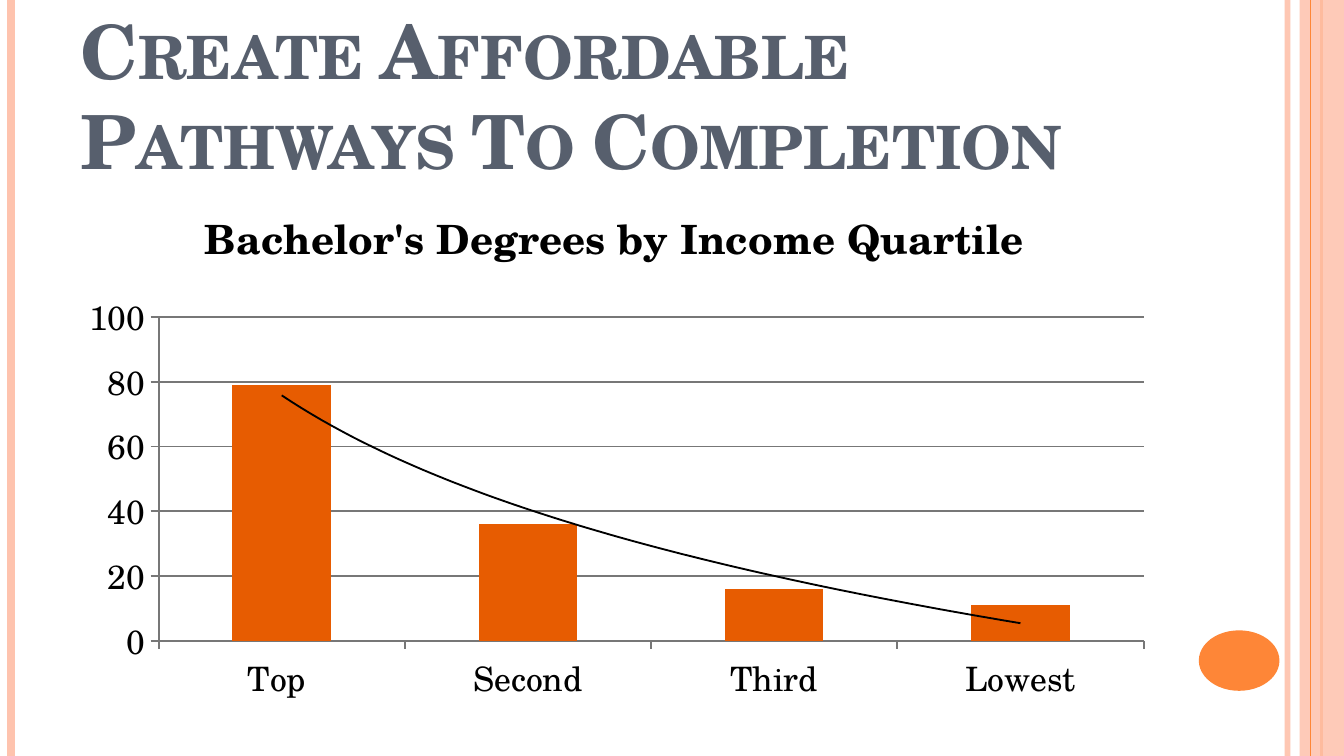
from typing import NamedTuple

from lxml import etree
from pptx import Presentation
from pptx.chart.data import CategoryChartData
from pptx.dml.color import RGBColor
from pptx.enum.chart import XL_CHART_TYPE as ChartType, XL_TICK_MARK as TickMark
from pptx.enum.shapes import MSO_CONNECTOR as Connector, MSO_SHAPE as Shape
from pptx.enum.text import MSO_ANCHOR as Anchor
from pptx.oxml import parse_xml
from pptx.oxml.ns import nsdecls, qn
from pptx.util import Inches, Pt

FONT = "TeX Gyre Schola"
PINK = RGBColor(0xFE, 0xC3, 0xAE)
ORANGE = RGBColor(0xFE, 0x86, 0x37)
BAR_ORANGE = RGBColor(0xE7, 0x5C, 0x01)
SLATE = RGBColor(0x57, 0x5F, 0x6D)
GREY = RGBColor(0x77, 0x77, 0x77)
BLACK = RGBColor(0, 0, 0)

WIDTH = 10
HEIGHT = WIDTH * 9 / 16
CHART_WIDTH, CHART_HEIGHT = 8.17, 4
CHART_TITLE = "Bachelor's Degrees by Income Quartile"
DEGREES = {"Top ": 79, "Second": 36, "Third": 16, "Lowest": 11}


class Stripe(NamedTuple):
    x: float
    weight: float
    color: RGBColor
    opacity: int = 100


class Block(NamedTuple):
    preset: Shape
    left: float
    top: float
    width: float
    height: float
    color: RGBColor
    opacity: int = 100


LOWER_STRIPES = [
    Stripe(9.58, 3, PINK, 93),
    Stripe(0.08, 4.5, PINK),
    Stripe(9.83, 1.5, ORANGE),
]
BAND = Block(Shape.RECTANGLE, 9.67, 0, 0.33, HEIGHT, PINK, 87)
UPPER_STRIPE = Stripe(9.75, 0.75, ORANGE)
DOT = Block(Shape.OVAL, 8.92, 4.69, 0.6, 0.45, ORANGE)


def set_opacity(properties, percent: int) -> None:
    if percent < 100:
        color = next(properties.iter(qn("a:srgbClr")))
        etree.SubElement(color, qn("a:alpha")).set("val", str(percent * 1000))


def draw_stripe(page, stripe: Stripe) -> None:
    x = Inches(stripe.x)
    line = page.shapes.add_connector(Connector.STRAIGHT, x, 0, x, Inches(HEIGHT))
    line.line.color.rgb = stripe.color
    line.line.width = Pt(stripe.weight)
    properties = line._element.spPr
    set_opacity(properties, stripe.opacity)
    etree.SubElement(properties, qn("a:effectLst"))


def draw_block(page, block: Block) -> None:
    shape = page.shapes.add_shape(
        block.preset, Inches(block.left), Inches(block.top),
        Inches(block.width), Inches(block.height))
    shape.shadow.inherit = False
    shape.fill.solid()
    shape.fill.fore_color.rgb = block.color
    shape.line.fill.background()
    set_opacity(shape._element.spPr, block.opacity)


def draw_title(page, text: str) -> None:
    box = page.shapes.add_textbox(Inches(0.5), Inches(0.15), Inches(8.17), Inches(1.27))
    frame = box.text_frame
    frame.word_wrap = True
    frame.vertical_anchor = Anchor.BOTTOM
    span = frame.paragraphs[0].add_run()
    span.text = text
    span.font.name = FONT
    span.font.size = Pt(40)
    span.font.bold = True
    span.font.color.rgb = SLATE
    span.font._element.set("cap", "small")


def manual_layout(inner: bool = False, **inches: float):
    """Turn inches inside the chart into the fractions that a layout needs."""
    target = '<c:layoutTarget val="inner"/>' if inner else ""
    modes = '<c:xMode val="edge"/><c:yMode val="edge"/>'
    values = "".join(
        f'<c:{key} val="{value / (CHART_WIDTH if key in "xw" else CHART_HEIGHT)}"/>'
        for key, value in inches.items())
    return parse_xml(f'<c:layout {nsdecls("c")}><c:manualLayout>{target}{modes}'
                     f'{values}</c:manualLayout></c:layout>')


def replace_layout(parent, layout, position: int) -> None:
    for old in parent.findall(qn("c:layout")):
        parent.remove(old)
    parent.insert(position, layout)


def add_log_trend(series) -> None:
    trend = parse_xml(
        f'<c:trendline {nsdecls("c", "a")}><c:spPr><a:ln w="12700"><a:solidFill>'
        f'<a:srgbClr val="{BLACK}"/></a:solidFill></a:ln></c:spPr>'
        '<c:trendlineType val="log"/><c:dispRSqr val="0"/><c:dispEq val="0"/>'
        '</c:trendline>')
    series._element.find(qn("c:cat")).addprevious(trend)


def style_line(line) -> None:
    line.color.rgb = GREY
    line.width = Pt(1)


def draw_chart(page) -> None:
    data = CategoryChartData()
    data.categories = list(DEGREES)
    data.add_series(CHART_TITLE, list(DEGREES.values()))
    chart = page.shapes.add_chart(
        ChartType.COLUMN_CLUSTERED, Inches(0.5), Inches(1.31),
        Inches(CHART_WIDTH), Inches(CHART_HEIGHT), data).chart
    chart.has_legend = False
    chart.font.name = FONT
    chart.font.size = Pt(18)
    chart.font.color.rgb = BLACK

    # Chart title
    chart.has_title = True
    span = chart.chart_title.text_frame.paragraphs[0].add_run()
    span.text = CHART_TITLE
    span.font.name = FONT
    span.font.size = Pt(21.6)
    span.font.bold = True
    span.font.color.rgb = BLACK
    replace_layout(chart.chart_title._element, manual_layout(x=0.97, y=0.14), 1)

    # Columns and trend
    plot = chart.plots[0]
    plot.gap_width = 150
    plot.vary_by_categories = False
    series = plot.series[0]
    series.format.fill.solid()
    series.format.fill.fore_color.rgb = BAR_ORANGE
    add_log_trend(series)
    area = chart._chartSpace.chart.plotArea
    replace_layout(area, manual_layout(inner=True, x=0.68, y=1.05, w=7.33, h=2.41), 0)

    # Axes
    for axis in (chart.category_axis, chart.value_axis):
        axis.major_tick_mark = TickMark.OUTSIDE
        axis.minor_tick_mark = TickMark.NONE
        style_line(axis.format.line)
    scale = chart.value_axis
    scale.minimum_scale, scale.maximum_scale, scale.major_unit = 0, 100, 20
    scale.has_major_gridlines = True
    style_line(scale.major_gridlines.format.line)


def main() -> None:
    deck = Presentation()
    deck.slide_width, deck.slide_height = Inches(WIDTH), Inches(HEIGHT)
    page = deck.slides.add_slide(deck.slide_layouts[6])

    # Side decoration
    for stripe in LOWER_STRIPES:
        draw_stripe(page, stripe)
    draw_block(page, BAND)
    draw_stripe(page, UPPER_STRIPE)
    draw_block(page, DOT)

    # Content
    draw_title(page, "Create Affordable Pathways To Completion")
    draw_chart(page)
    deck.save("out.pptx")


if __name__ == "__main__":
    main()
